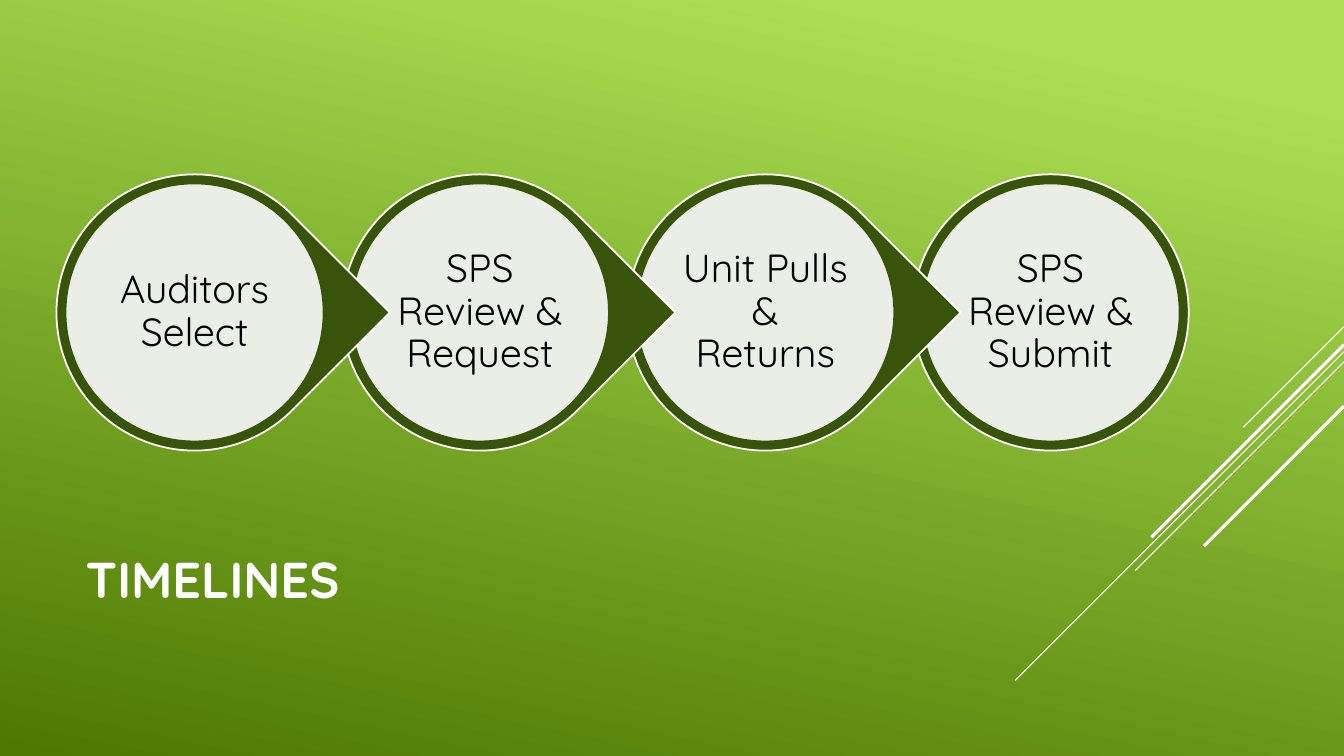
from lxml.etree import SubElement as Sub
from pptx import Presentation
from pptx.dml.color import RGBColor as RGB
from pptx.enum.shapes import MSO_CONNECTOR as Link, MSO_SHAPE as Form
from pptx.enum.text import MSO_ANCHOR as Anchor, PP_ALIGN as Align
from pptx.oxml.ns import qn
from pptx.util import Inches, Pt

HUES = {"white": "FFFFFF", "black": "000000", "dark": "38540A",
        "lime": "ACDF55", "moss": "4C7800"}
FONT = "Quicksand"
STEPS = ["Auditors Select", "SPS Review & Request",
         "Unit Pulls & Returns", "SPS Review & Submit"]
LEFT, TOP, PITCH = 0.56, 1.73, 2.83
RING, DISC, LABEL = 2.74, 2.56, 1.83
# right-edge height, length across and down, weight
RAYS = [(3.24, 1, 0.75), (3.49, 3.26, 0.75), (3.59, 2.07, 0.75),
        (3.42, 1.91, 2.25), (4.03, 1.39, 2.25)]


def hue(name):
    return RGB.from_string(HUES[name])


def write(frame, text, size=28, color="black", bold=False,
          align=Align.CENTER, space=None, inset=None):
    frame.word_wrap = True
    frame.vertical_anchor = Anchor.MIDDLE
    if inset is not None:
        frame.margin_left = frame.margin_right = Inches(inset)
        frame.margin_top = frame.margin_bottom = Inches(inset)
    para = frame.paragraphs[0]
    para.alignment = align
    para.line_spacing = space
    run = para.add_run()
    run.text = text
    font = run.font
    font.name, font.size, font.bold = FONT, Pt(size), bold
    font.color.rgb = hue(color)


class Board:
    def __init__(self, deck):
        self.slide = deck.slides.add_slide(deck.slide_layouts[5])
        self.shapes = self.slide.shapes

    def back(self):
        fill = self.slide.background.fill
        fill.gradient()
        fill.gradient_angle = 258
        for stop, spot, name in zip(fill.gradient_stops, (0.1, 1), ("lime", "moss")):
            stop.position = spot
            stop.color.rgb = hue(name)

    def title(self, text, x, y, w, h):
        box = self.shapes.title
        box.left, box.top, box.width, box.height = map(Inches, (x, y, w, h))
        write(box.text_frame, text, size=36, color="white", bold=True,
              align=Align.LEFT)

    def ray(self, y, run, weight):
        """Draw a 45-degree line down and left from the right edge."""
        edge = 13.33
        line = self.shapes.add_connector(
            Link.STRAIGHT, *map(Inches, (edge, y, edge - run, y + run)))
        line.line.color.rgb = hue("white")
        line.line.width = Pt(weight)
        Sub(line._element.spPr, qn("a:effectLst"))

    def round(self, form, mid, size, fill, edge, turn=0, alpha=None):
        """Draw a round shape centred on mid; alpha is opacity in percent."""
        x, y = (c - size / 2 for c in mid)
        item = self.shapes.add_shape(form, *map(Inches, (x, y, size, size)))
        item.shadow.inherit = False
        item.rotation = turn
        item.fill.solid()
        item.fill.fore_color.rgb = hue(fill)
        item.line.color.rgb = hue(edge)
        item.line.width = Pt(1.25)
        if alpha:
            tint = item._element.spPr.find(qn("a:solidFill"))[0]
            Sub(tint, qn("a:alpha"), val=str(alpha * 1000))

    def label(self, text, mid, size):
        x, y = (c - size / 2 for c in mid)
        box = self.shapes.add_textbox(*map(Inches, (x, y, size, size)))
        write(box.text_frame, text, space=0.9, inset=0.04)

    def step(self, text, mid, last):
        form, turn = (Form.OVAL, 0) if last else (Form.TEAR, 45)
        self.round(form, mid, RING, "dark", "white", turn=turn)
        self.round(Form.OVAL, mid, DISC, "white", "dark", alpha=90)
        self.label(text, mid, LABEL)


def main():
    deck = Presentation()
    deck.slide_width, deck.slide_height = Inches(13.33), Inches(7.5)
    board = Board(deck)
    board.back()
    for ray in RAYS:
        board.ray(*ray)
    board.title("TIMELINES", 0.75, 4.91, 9.33, 1.65)
    end = len(STEPS) - 1
    # Right to left, so that each tip lies over the next circle
    for i, text in reversed(list(enumerate(STEPS))):
        mid = (LEFT + i * PITCH + RING / 2, TOP + RING / 2)
        board.step(text, mid, i == end)
    deck.save("out.pptx")


if __name__ == "__main__":
    main()
